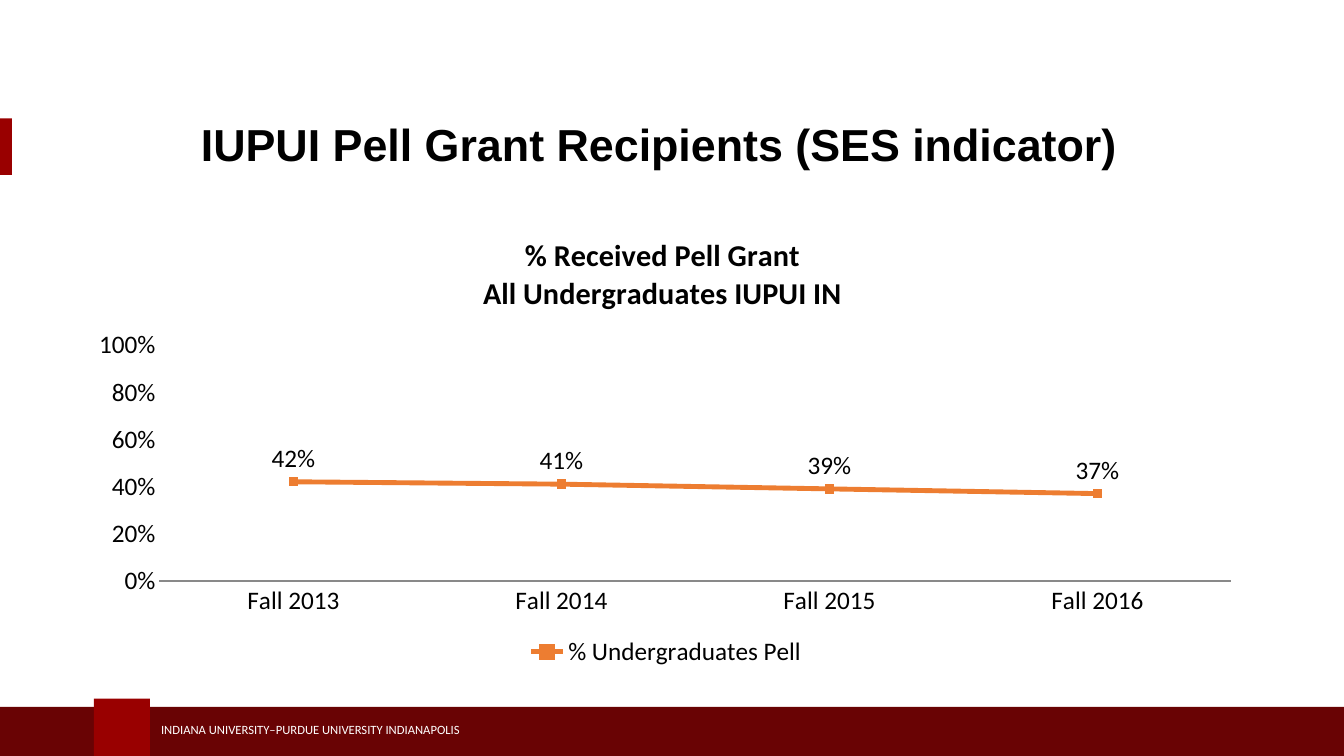
from dataclasses import dataclass

from lxml import etree
from pptx import Presentation
from pptx.chart.data import CategoryChartData as ChartData
from pptx.dml.color import RGBColor as RGB
from pptx.enum.chart import XL_CHART_TYPE as Kind, XL_LABEL_POSITION as LabelPos
from pptx.enum.chart import XL_LEGEND_POSITION as LegendPos, XL_MARKER_STYLE as Mark
from pptx.enum.chart import XL_TICK_MARK as Tick
from pptx.enum.shapes import MSO_SHAPE as Shape
from pptx.enum.text import MSO_ANCHOR as Anchor, PP_ALIGN as Align
from pptx.oxml.ns import qn
from pptx.util import Pt

WIDTH, HEIGHT = 960, 540


@dataclass(frozen=True)
class Theme:
    red: RGB = RGB(0x99, 0x00, 0x00)
    dark: RGB = RGB(0x69, 0x03, 0x04)
    line: RGB = RGB(0xED, 0x7D, 0x31)
    axis: RGB = RGB(0x89, 0x89, 0x89)
    black: RGB = RGB(0, 0, 0)
    white: RGB = RGB(0xFF, 0xFF, 0xFF)
    head: str = "Arial"
    body: str = "Calibri"
    title: float = 32
    caption: float = 21.6
    label: float = 18
    foot: float = 9


class Page:
    def __init__(self, slide, theme):
        self.slide = slide
        self.theme = theme

    def style(self, font, name, size, color, bold=False):
        font.name, font.size, font.bold = name, Pt(size), bold
        font.color.rgb = color

    def label(self, frame, text, *look, align=Align.LEFT):
        frame.word_wrap = True
        frame.vertical_anchor = Anchor.MIDDLE
        frame.text = text
        para = frame.paragraphs[0]
        para.alignment = align
        self.style(para.runs[0].font, *look)
        return para

    def title(self, text, left, top, width, height):
        t = self.theme
        box = self.slide.shapes.title
        box.left, box.top, box.width, box.height = map(Pt, (left, top, width, height))
        para = self.label(box.text_frame, text, t.head, t.title, t.black, True,
                          align=Align.CENTER)
        para.line_spacing = 0.9

    def block(self, color, *area):
        box = self.slide.shapes.add_shape(Shape.RECTANGLE, *map(Pt, area))
        box.shadow.inherit = False
        box.fill.solid()
        box.fill.fore_color.rgb = color
        box.line.fill.background()

    def footer(self, text, *area):
        t = self.theme
        box = self.slide.shapes.add_textbox(*map(Pt, area))
        self.label(box.text_frame, text, t.body, t.foot, t.white)

    def chart(self, heading, name, points, *area):
        t = self.theme
        data = ChartData(number_format="0%")
        data.categories = list(points)
        data.add_series(name, points.values())
        chart = self.slide.shapes.add_chart(
            Kind.LINE_MARKERS, *map(Pt, area), data).chart
        self.style(chart.font, t.body, t.label, t.black)

        chart.has_title = True
        chart.chart_title.include_in_layout = False
        frame = chart.chart_title.text_frame
        frame.text = heading
        for para in frame.paragraphs:
            self.style(para.runs[0].font, t.body, t.caption, t.black, True)

        chart.has_legend = True
        chart.legend.position = LegendPos.BOTTOM
        chart.legend.include_in_layout = False
        self.axes(chart)
        self.series(chart.plots[0])
        self.layout(chart, x=0.07, y=0.28, w=0.91, h=0.52)

    def axes(self, chart):
        cat, val = chart.category_axis, chart.value_axis
        for axis in (cat, val):
            axis.major_tick_mark = axis.minor_tick_mark = Tick.NONE
            axis.has_major_gridlines = False
        cat.format.line.color.rgb = self.theme.axis
        cat.format.line.width = Pt(0.75)
        val.format.line.fill.background()
        val.minimum_scale, val.maximum_scale, val.major_unit = 0, 1, 0.2
        val.tick_labels.number_format = "0%"
        val.tick_labels.number_format_is_linked = False

    def series(self, plot):
        t = self.theme
        plot.vary_by_categories = False
        line = plot.series[0]
        line.smooth = False
        line.format.line.color.rgb = t.line
        line.format.line.width = Pt(3.5)
        line.marker.style = Mark.SQUARE
        line.marker.size = 6
        line.marker.format.fill.solid()
        line.marker.format.fill.fore_color.rgb = t.line
        line.marker.format.line.color.rgb = t.line
        labels = line.data_labels
        labels.show_value = True
        labels.position = LabelPos.ABOVE
        labels.number_format = "0%"
        labels.number_format_is_linked = False
        self.style(labels.font, t.body, t.label, t.black)

    def layout(self, chart, **spots):
        """Fix the inner plot area as fractions of the chart."""
        area = chart.plots[0]._element.getparent()
        for old in area.findall(qn("c:layout")):
            area.remove(old)
        layout = etree.Element(qn("c:layout"))
        manual = etree.SubElement(layout, qn("c:manualLayout"))
        rules = {"layoutTarget": "inner", "xMode": "edge", "yMode": "edge", **spots}
        for key, val in rules.items():
            etree.SubElement(manual, qn(f"c:{key}")).set("val", str(val))
        area.insert(0, layout)


def main():
    deck = Presentation()
    deck.slide_width, deck.slide_height = Pt(WIDTH), Pt(HEIGHT)
    theme = Theme()
    page = Page(deck.slides.add_slide(deck.slide_layouts[5]), theme)
    page.block(theme.red, 0, 84.5, 8.5, 40.5)
    page.block(theme.dark, 0, 505, WIDTH, HEIGHT - 505)
    page.block(theme.red, 67, 499, 40, HEIGHT - 499)
    page.footer("INDIANA UNIVERSITY–PURDUE UNIVERSITY INDIANAPOLIS", 108, 512, 380, 18)
    page.title("IUPUI Pell Grant Recipients (SES indicator) ", 55.5, 80, 840, 50)
    page.chart("% Received Pell Grant \nAll Undergraduates IUPUI IN ",
               "% Undergraduates Pell",
               {"Fall 2013": 0.42, "Fall 2014": 0.41,
                "Fall 2015": 0.39, "Fall 2016": 0.37},
               55, 155.5, 841.5, 324.5)
    deck.save("out.pptx")


if __name__ == "__main__":
    main()
